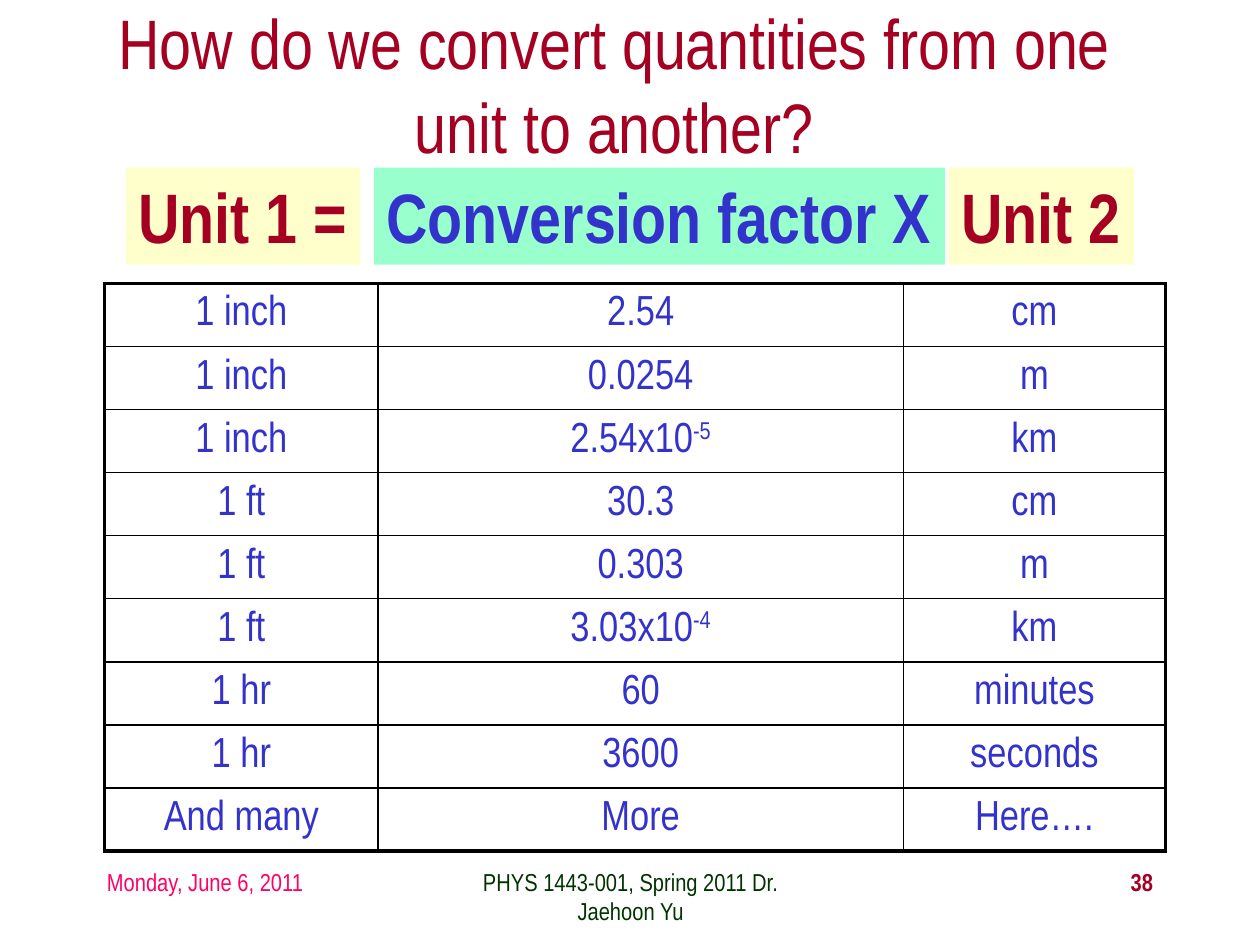
"""Build a slide showing unit conversion factors in a table."""
import pptx
import pptx.util
import pptx.dml.color
import pptx.enum.shapes
import pptx.enum.text
import pptx.oxml.ns
from lxml import etree

Inches, Pt = pptx.util.Inches, pptx.util.Pt
RGB = pptx.dml.color.RGBColor
ALIGN, ANCHOR = pptx.enum.text.PP_ALIGN, pptx.enum.text.MSO_ANCHOR
RED, BLUE = RGB(0xA5, 0x00, 0x21), RGB(0x33, 0x33, 0xCC)
PINK, GREEN = RGB(0xFF, 0x00, 0x66), RGB(0x00, 0x33, 0x00)
YELLOW, MINT = RGB(0xFF, 0xFF, 0xCC), RGB(0x99, 0xFF, 0xCC)
BLACK = RGB(0x00, 0x00, 0x00)
FONT = "Arial Narrow"

TITLE = "How do we convert quantities from one unit to another?"
FOOTERS = [
    ("Monday, June 6, 2011", 0.75, 2.08, ALIGN.LEFT, PINK, False),
    ("PHYS 1443-001, Spring 2011 Dr. Jaehoon Yu", 3.42, 3.17, ALIGN.CENTER, GREEN, False),
    ("38", 7.17, 2.08, ALIGN.RIGHT, RED, True),
]
FORMULA = [
    ("Unit 1 =", 1, 1.86, YELLOW, RED),
    ("Unit 2", 7.53, 1.47, YELLOW, RED),
    ("Conversion factor X", 2.97, 4.53, MINT, BLUE),
]
COLUMNS = [2.17, 4.17, 2.08]
ROW_HEIGHT = 0.5
ROWS = [
    ("1 inch", "2.54", "cm"),
    ("1 inch", "0.0254", "m"),
    ("1 inch", "2.54x10^-5", "km"),
    ("1 ft", "30.3", "cm"),
    ("1 ft", "0.303", "m"),
    ("1 ft", "3.03x10^-4", "km"),
    ("1 hr", "60", "minutes"),
    ("1 hr", "3600", "seconds"),
    ("And many", "More", "Here…."),
]


def style(p, size, color, align, bold=False):
    p.alignment = align
    p.font.name, p.font.size, p.font.bold = FONT, Pt(size), bold
    p.font.color.rgb = color


def add_text(s, text, box, size, color, align, bold=False, anchor=ANCHOR.TOP):
    tf = s.shapes.add_textbox(*map(Inches, box)).text_frame
    tf.word_wrap, tf.vertical_anchor = True, anchor
    tf.text = text
    style(tf.paragraphs[0], size, color, align, bold)


def add_term(s, text, left, width, fill, color):
    sp = s.shapes.add_shape(pptx.enum.shapes.MSO_SHAPE.RECTANGLE,
                            *map(Inches, (left, 1.33, width, 0.77)))
    sp.shadow.inherit = False
    sp.fill.solid()
    sp.fill.fore_color.rgb = fill
    sp.line.fill.background()
    tf = sp.text_frame
    tf.word_wrap, tf.vertical_anchor = False, ANCHOR.TOP
    tf.auto_size = pptx.enum.text.MSO_AUTO_SIZE.SHAPE_TO_FIT_TEXT
    tf.text = text
    style(tf.paragraphs[0], 40, color, ALIGN.LEFT, True)


def set_borders(cell, widths):
    qn = pptx.oxml.ns.qn
    tc_pr = cell._tc.get_or_add_tcPr()
    for i, (side, width) in enumerate(zip("LRTB", widths)):
        ln = etree.Element(qn("a:ln" + side), w=str(Pt(width)))
        fill = etree.SubElement(ln, qn("a:solidFill"))
        etree.SubElement(fill, qn("a:srgbClr"), val=str(BLACK))
        tc_pr.insert(i, ln)


def fill_cell(cell, text):
    cell.fill.background()
    cell.vertical_anchor = ANCHOR.MIDDLE
    p = cell.text_frame.paragraphs[0]
    base, _, power = text.partition("^")
    p.add_run().text = base
    if power:
        r = p.add_run()
        r.text = power
        r.font._element.set("baseline", "30000")
    style(p, 24, BLUE, ALIGN.CENTER)


def add_conversions(s):
    n_rows, n_cols = len(ROWS), len(COLUMNS)
    table = s.shapes.add_table(n_rows, n_cols, Inches(0.83), Inches(2.25),
                               Inches(sum(COLUMNS)), Inches(ROW_HEIGHT * n_rows)).table
    table.first_row = table.horz_banding = False
    for column, width in zip(table.columns, COLUMNS):
        column.width = Inches(width)
    for i, row in enumerate(ROWS):
        table.rows[i].height = Inches(ROW_HEIGHT)
        for j, text in enumerate(row):
            cell = table.cell(i, j)
            fill_cell(cell, text)
            outer = (j == 0, j == n_cols - 1, i == 0, i == n_rows - 1)
            set_borders(cell, [2.25 if edge else 1 for edge in outer])


def main():
    prs = pptx.Presentation()
    prs.slide_width, prs.slide_height = Inches(10), Inches(7.5)
    s = prs.slides.add_slide(prs.slide_layouts[6])
    for text, left, width, align, color, bold in FOOTERS:
        add_text(s, text, (left, 6.83, width, 0.5), 14, color, align, bold)
    add_text(s, TITLE, (0.75, 0, 8.25, 1.33), 40, RED, ALIGN.CENTER, anchor=ANCHOR.MIDDLE)
    for term in FORMULA:
        add_term(s, *term)
    add_conversions(s)
    prs.save("out.pptx")


if __name__ == "__main__":
    main()
